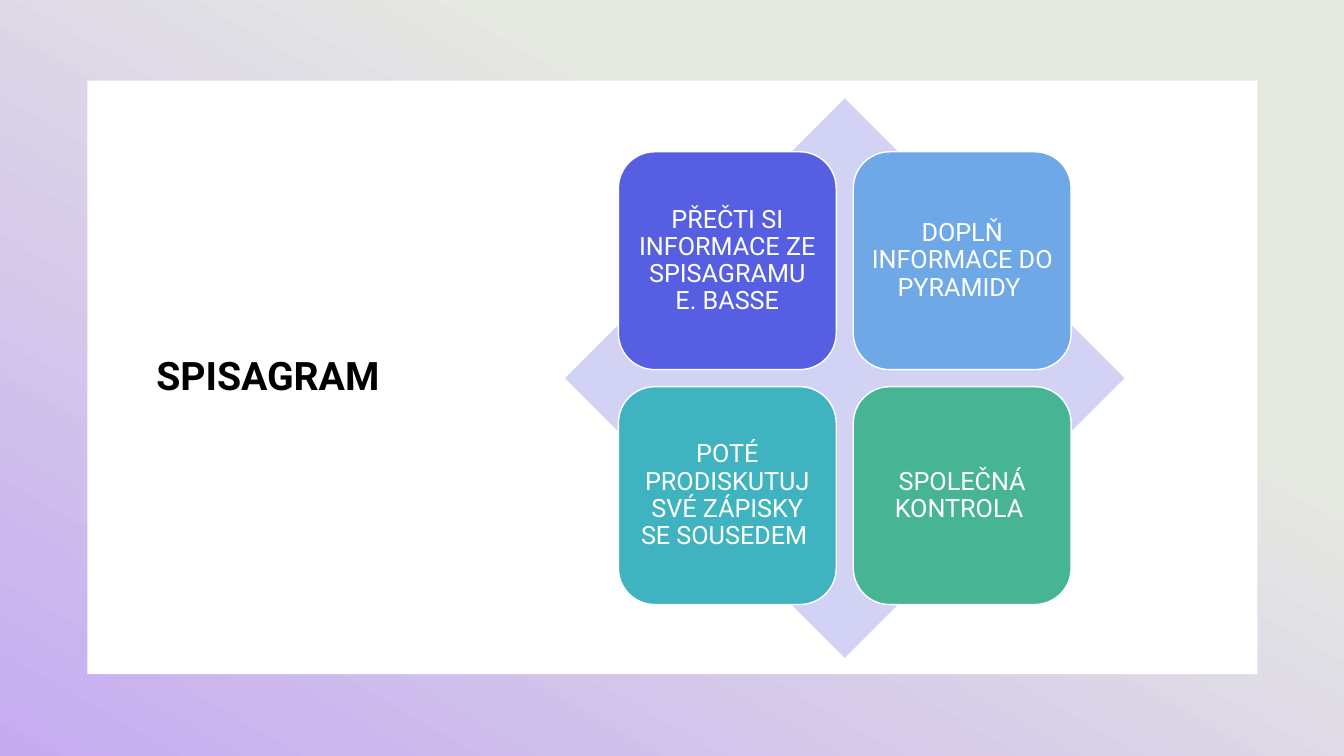
"""Build the SPISAGRAM slide with a diamond matrix of four tasks."""
from pptx import Presentation
from pptx.dml.color import RGBColor
from pptx.enum.shapes import MSO_SHAPE
from pptx.enum.text import MSO_ANCHOR, PP_ALIGN
from pptx.util import Cm, Pt

COLORS = {
    "mist": "E6E8E2",
    "lilac": "C5ACF1",
    "white": "FFFFFF",
    "black": "000000",
    "diamond": "D1D2F4",
    "indigo": "565FE2",
    "blue": "6EA8E6",
    "teal": "40B3C0",
    "green": "47B593",
}
TASKS = [
    ("PŘEČTI SI INFORMACE ZE SPISAGRAMU E. BASSE", "indigo"),
    ("DOPLŇ INFORMACE DO PYRAMIDY ", "blue"),
    ("POTÉ PRODISKUTUJ SVÉ ZÁPISKY SE SOUSEDEM ", "teal"),
    ("SPOLEČNÁ KONTROLA ", "green"),
]
DIAMOND_LEFT, DIAMOND_TOP, DIAMOND_SIZE = 14.24, 2.48, 14.1
CARD_SIZE, CARD_GAP, CARD_INSET = 5.49, 0.43, 0.18


def add_filled_shape(kind, left, top, width, height, color):
    shape = slide.shapes.add_shape(kind, Cm(left), Cm(top), Cm(width), Cm(height))
    shape.shadow.inherit = False
    shape.fill.solid()
    shape.fill.fore_color.rgb = RGBColor.from_string(COLORS[color])
    shape.line.fill.background()
    return shape


def write_text(shape, text, size, color, alignment, bold=False):
    text_frame = shape.text_frame
    text_frame.text = text
    text_frame.word_wrap = True
    text_frame.vertical_anchor = MSO_ANCHOR.MIDDLE
    paragraph = text_frame.paragraphs[0]
    paragraph.alignment = alignment
    paragraph.line_spacing = 0.9
    font = paragraph.runs[0].font
    font.name = "Roboto"
    font.size = Pt(size)
    font.bold = bold
    font.color.rgb = RGBColor.from_string(COLORS[color])


presentation = Presentation()
presentation.slide_width = Cm(33.87)
presentation.slide_height = Cm(19.05)
slide = presentation.slides.add_slide(presentation.slide_layouts[6])

backdrop = add_filled_shape(MSO_SHAPE.RECTANGLE, 0, 0, 33.87, 19.05, "mist")
backdrop.fill.gradient()
backdrop.fill.gradient_angle = 240
gradient = [(0.32, "mist"), (1, "lilac")]
for stop, (position, color) in zip(backdrop.fill.gradient_stops, gradient):
    stop.position = position
    stop.color.rgb = RGBColor.from_string(COLORS[color])

add_filled_shape(MSO_SHAPE.RECTANGLE, 2.2, 2.03, 29.49, 14.96, "white")

title = slide.shapes.add_textbox(Cm(3.69), Cm(5.72), Cm(8.38), Cm(7.59))
write_text(title, "SPISAGRAM", 28, "black", PP_ALIGN.LEFT, bold=True)

add_filled_shape(
    MSO_SHAPE.DIAMOND, DIAMOND_LEFT, DIAMOND_TOP, DIAMOND_SIZE, DIAMOND_SIZE, "diamond"
)

margin = (DIAMOND_SIZE - 2 * CARD_SIZE - CARD_GAP) / 2
for index, (text, color) in enumerate(TASKS):
    row, column = divmod(index, 2)
    left = DIAMOND_LEFT + margin + column * (CARD_SIZE + CARD_GAP)
    top = DIAMOND_TOP + margin + row * (CARD_SIZE + CARD_GAP)
    card = add_filled_shape(
        MSO_SHAPE.ROUNDED_RECTANGLE, left, top, CARD_SIZE, CARD_SIZE, color
    )
    card.line.color.rgb = RGBColor.from_string(COLORS["white"])
    card.line.width = Pt(1)
    text_frame = card.text_frame
    text_frame.margin_left = text_frame.margin_right = Cm(CARD_INSET)
    text_frame.margin_top = text_frame.margin_bottom = Cm(CARD_INSET)
    write_text(card, text, 18, "white", PP_ALIGN.CENTER)

presentation.save("out.pptx")
